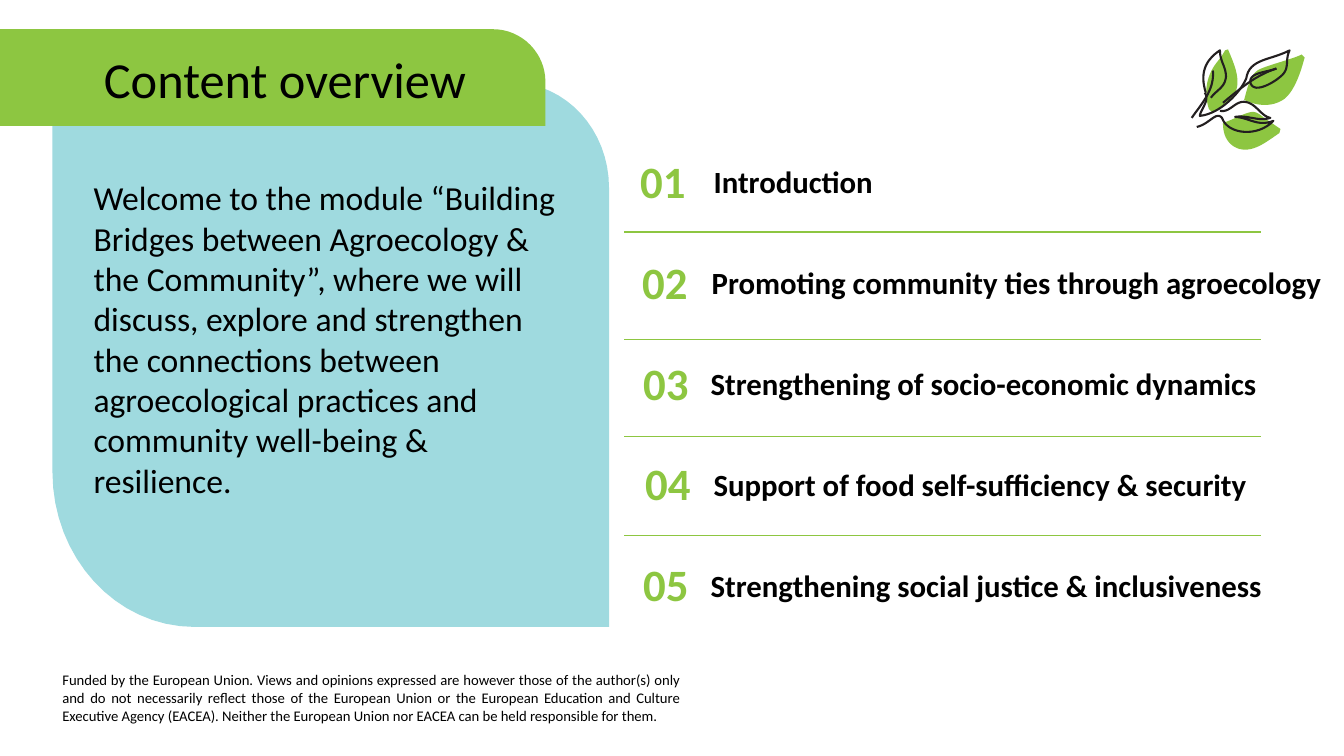
from pptx import Presentation
from pptx.dml.color import RGBColor as RGB
from pptx.enum.shapes import MSO_CONNECTOR as Link
from pptx.enum.text import MSO_ANCHOR as Anchor, PP_ALIGN as Align
from pptx.oxml.ns import qn
from pptx.util import Inches, Pt
from lxml.etree import SubElement

# Content
TITLE = "Content overview"
INTRO = ("Welcome to the module “Building Bridges between Agroecology & the Community”, "
         "where we will discuss, explore and strengthen the connections between "
         "agroecological practices and community well-being & resilience.")
NOTE = ("Funded by the European Union. Views and opinions expressed are however those of "
        "the author(s) only and do not necessarily reflect those of the European Union or "
        "the European Education and Culture Executive Agency (EACEA). Neither the European "
        "Union nor EACEA can be held responsible for them.")
# Item text, left of its number, left of its text, width of its text
ITEMS = [
    ("Introduction", 6.19, 6.98, 4.88),
    ("Promoting community ties through agroecology", 6.21, 6.96, 6.38),
    ("Strengthening of socio-economic dynamics", 6.22, 6.95, 5.71),
    ("Support of food self-sufficiency & security", 6.24, 6.98, 5.98),
    ("Strengthening social justice & inclusiveness", 6.22, 6.95, 5.98),
]
RULES = [2.3, 3.37, 4.33, 5.31]
HEX = {"green": "8DC641", "blue": "9FDADF", "black": "000000", "ink": "231F20"}

# Outlines: a start point, then lines (2 numbers) or curves (6 numbers)
PANEL = [(6.04, 6.22), (1.93, 6.22), (1.15, 6.22, 0.52, 5.53, 0.52, 4.68), (0.52, 0.82),
         (5.08, 0.82), (5.61, 0.82, 6.04, 1.29, 6.04, 1.86)]
RIBBON = [(-0.02, 0.29), (4.89, 0.29), (5.18, 0.29, 5.41, 0.53, 5.41, 0.81), (5.41, 1.25),
          (0, 1.25), (0, 0.48)]
LEAVES = [
    [(12.02, 1.11), (12.15, 1.05, 12.25, 0.97, 12.27, 0.86),
     (12.29, 0.74, 12.23, 0.61, 12.18, 0.49), (12.15, 0.5),
     (12.12, 0.56, 12.08, 0.6, 12.04, 0.66), (11.95, 0.8, 11.95, 0.95, 11.99, 1.08)],
    [(12.74, 0.98), (12.84, 0.9, 12.9, 0.72, 12.94, 0.57), (12.91, 0.54),
     (12.84, 0.58, 12.63, 0.63, 12.51, 0.68), (12.4, 0.72, 12.38, 0.85, 12.34, 0.99),
     (12.48, 1.06, 12.63, 1.06, 12.74, 0.98)],
    [(12.69, 1.32), (12.7, 1.28), (12.54, 1.17), (12.5, 1.14, 12.47, 1.11, 12.42, 1.11),
     (12.34, 1.12, 12.25, 1.18, 12.13, 1.22), (12.13, 1.35, 12.18, 1.43, 12.27, 1.47),
     (12.42, 1.53, 12.57, 1.4, 12.69, 1.32)],
]
STROKES = [
    [(11.96, 0.92), (11.9, 0.73, 11.95, 0.6, 12.1, 0.5),
     (12.1, 0.61, 12.16, 0.66, 12.16, 0.76), (12.15, 0.87, 12.07, 0.89, 12.01, 0.97)],
    [(11.82, 1.17), (11.9, 1.05, 12.05, 0.9, 12.03, 0.7)],
    [(11.95, 0.92), (12, 1, 11.91, 1.08, 11.9, 1.15),
     (12.1, 1.13, 12.3, 0.92, 12.36, 0.78), (12.39, 0.58, 12.6, 0.6, 12.79, 0.5),
     (12.74, 0.6, 12.8, 0.68, 12.7, 0.76), (12.62, 0.83, 12.42, 0.94, 12.4, 0.81),
     (12.4, 0.72, 12.55, 0.72, 12.66, 0.68)],
    [(12.13, 1.02), (12.3, 0.88, 12.45, 0.75, 12.66, 0.68)],
    [(11.87, 1.26), (12, 1.23, 12.06, 1.1, 12.12, 1.17),
     (12.18, 1.34, 12.48, 1.36, 12.63, 1.2), (12.47, 1.26, 12.4, 1.17, 12.25, 1.16),
     (12.38, 1.14, 12.48, 1.21, 12.6, 1.17), (12.5, 1.15, 12.46, 1.02, 12.34, 1.01),
     (12.24, 1.01, 12.2, 1.12, 12.1, 1.1)],
]

deck = Presentation()
deck.slide_width, deck.slide_height = Inches(13.33), Inches(7.5)
slide = deck.slides.add_slide(deck.slide_layouts[5])
shapes = slide.shapes


def tint(name):
    return RGB.from_string(HEX[name])


def trace(way, steps=16):
    """Turn an outline into points along its lines and curves."""
    pts = [way[0]]
    for seg in way[1:]:
        if len(seg) == 2:
            pts.append(seg)
            continue
        ends = [pts[-1], seg[:2], seg[2:4], seg[4:]]
        for k in range(1, steps + 1):
            t = k / steps
            mix = ((1 - t) ** 3, 3 * t * (1 - t) ** 2, 3 * t * t * (1 - t), t ** 3)
            pts.append(tuple(sum(m * e[i] for m, e in zip(mix, ends)) for i in (0, 1)))
    return [(Inches(x), Inches(y)) for x, y in pts]


def draw(way, fill=None):
    """Draw a filled outline, or an open ink stroke when there is no fill."""
    first, *rest = trace(way)
    pen = shapes.build_freeform(*first)
    pen.add_line_segments(rest, close=bool(fill))
    part = pen.convert_to_shape()
    part.shadow.inherit = False
    if fill:
        part.fill.solid()
        part.fill.fore_color.rgb = tint(fill)
        part.line.fill.background()
    else:
        part.fill.background()
        part.line.color.rgb = tint("ink")
        part.line.width = Pt(1.5)


def write(box, text, size, color="black", bold=False, align=Align.LEFT,
          anchor=Anchor.MIDDLE, lead=0.9):
    frame = box.text_frame
    frame.word_wrap = True
    frame.vertical_anchor = anchor
    frame.text = text
    para = frame.paragraphs[0]
    para.alignment, para.line_spacing = align, lead
    font = para.runs[0].font
    font.name, font.size, font.bold = "Calibri", Pt(size), bold
    font.color.rgb = tint(color)
    return para


def add_box(x, y, w, h):
    return shapes.add_textbox(Inches(x), Inches(y), Inches(w), Inches(h))


# Panel and title ribbon
draw(PANEL, "blue")
draw(RIBBON, "green")

# Rules between items
for y in RULES:
    rule = shapes.add_connector(Link.STRAIGHT, Inches(6.19), Inches(y), Inches(12.51), Inches(y))
    rule.line.color.rgb = tint("green")
    rule.line.width = Pt(1)
    SubElement(rule._element.spPr, qn("a:effectLst"))

# Funding note and welcome text
write(add_box(0.52, 6.61, 6.33, 0.66), NOTE, 10.5, align=Align.JUSTIFY,
      anchor=Anchor.TOP, lead=1.0)
intro = write(add_box(0.58, 1.71, 5.16, 4.68), INTRO, 24, anchor=Anchor.TOP, lead=1.0)
intro._p.get_or_add_pPr().set("marL", str(Inches(0.25)))

# Numbered items
for i, (text, left, start, wide) in enumerate(ITEMS):
    y = 1.45 + i
    write(add_box(left, y, 0.77, 0.75), f"{i + 1:02}", 32, "green", True, Align.CENTER)
    write(add_box(start, y, wide, 0.75), text, 22, bold=True)

# Title, brought in front of the ribbon
title = shapes.title
title.left, title.top = Inches(0.93), Inches(0.42)
title.width, title.height = Inches(5.51), Inches(0.79)
write(title, TITLE, 36)
shapes._spTree.append(title._element)

# Leaf sprig
for leaf in LEAVES:
    draw(leaf, "green")
for stroke in STROKES:
    draw(stroke)

deck.save("out.pptx")
